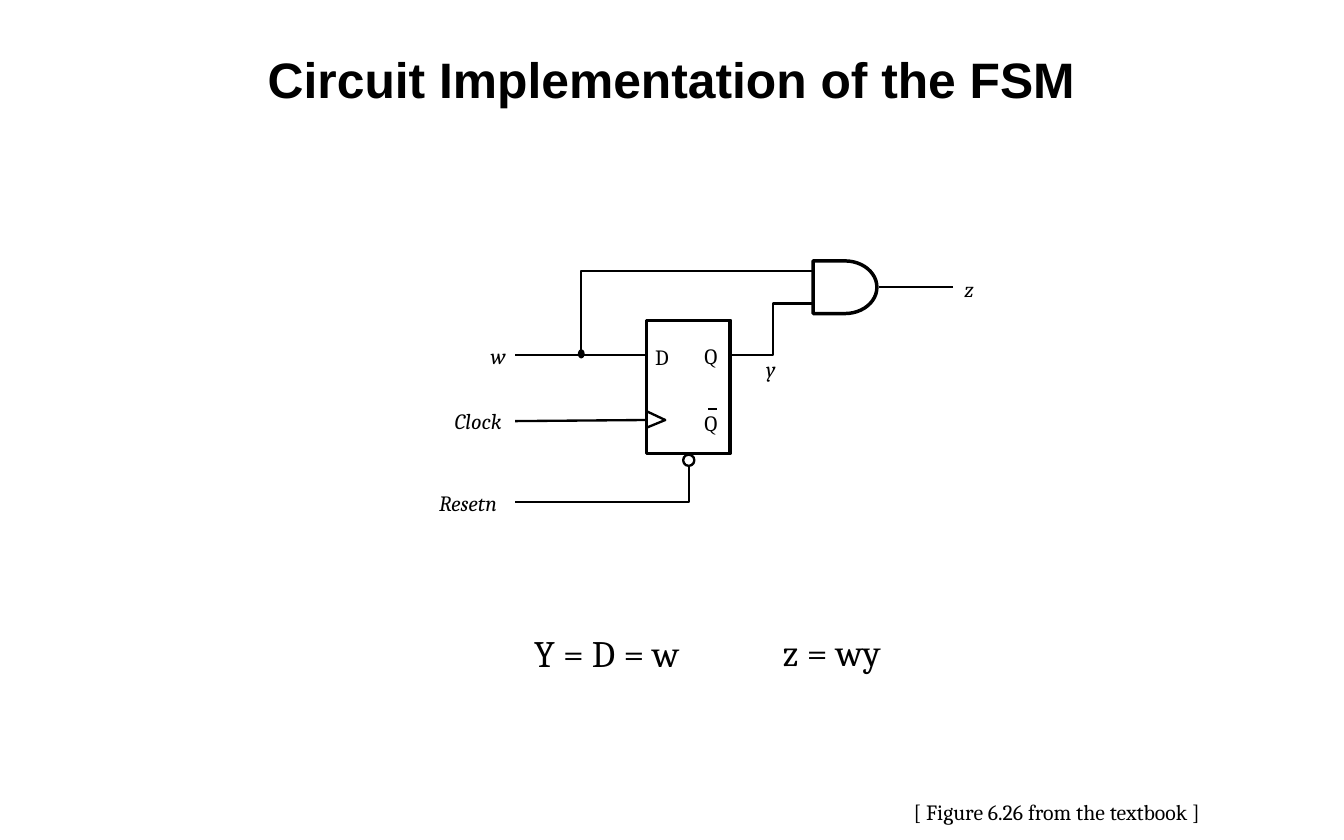
import dataclasses
import typing

import lxml.etree
import pptx
import pptx.dml.color
import pptx.enum.shapes
import pptx.enum.text
import pptx.oxml.ns
import pptx.util

WIDE, HIGH = 12, 7.5
COLS, ROWS = 120, 75
BLACK, WHITE = "000000", "FFFFFF"
THIN, THICK = 1.5, 2.25
KIND = pptx.enum.shapes.MSO_SHAPE
FIT = pptx.enum.text.MSO_AUTO_SIZE
Point = tuple[float, float]


@dataclasses.dataclass
class Label:
    text: str
    col: float
    row: float
    wide: float
    high: float = 2.4
    size: int = 14
    slant: bool = False
    inset: bool = False


@dataclasses.dataclass
class Part:
    kind: pptx.enum.shapes.MSO_SHAPE
    col: float
    row: float
    wide: float
    high: float
    fill: str = WHITE
    line: float = THIN


WIRES: list[list[Point]] = [
    [(46, 44.8), (61.5, 44.8), (61.5, 40.5)],
    [(72.6, 27.1), (69, 27.1), (69, 31.7), (65.2, 31.7)],
    [(72.5, 24.2), (51.9, 24.2), (51.9, 31.7)],
    [(57.7, 38.2), (59.4, 37.5), (57.7, 36.7)],
]

LINES: list[tuple[Point, Point]] = [
    ((85.1, 25.6), (78.5, 25.6)),
    ((64, 36.5), (63.2, 36.5)),
    ((57.7, 37.5), (46, 37.6)),
    ((57.7, 31.7), (46, 31.7)),
]

BLOCK = Part(KIND.RECTANGLE, 57.7, 28.6, 7.5, 11.9, line=THICK)
PARTS = [
    Part(KIND.OVAL, 51.7, 31.3, 0.4, 0.6, fill=BLACK),
    Part(KIND.OVAL, 61, 40.6, 1, 1),
    Part(KIND.FLOWCHART_DELAY, 72.6, 23.3, 5.7, 4.7, line=THICK),
]

LABELS = [
    Label("w", 43.8, 30.6, 1.9, slant=True),
    Label("Clock", 40.6, 36.4, 5.2, slant=True),
    Label("Resetn", 39.2, 43.7, 5.4, slant=True),
    Label("z", 86.1, 24.6, 1.4, slant=True),
    Label("y", 68.4, 31.8, 1.5, slant=True),
    Label("D", 58.5, 30.7, 1.9),
    Label("Q", 62.9, 30.6, 1.9),
    Label("Q", 62.9, 36.6, 1.9),
    Label("Y = D = w", 46.7, 55.8, 16.5, 5.1, size=24, inset=True),
    Label("z = wy", 68.9, 55.7, 11.2, 5.1, size=24, inset=True),
    Label("[ Figure 6.26 from the textbook ]", 80.6, 70.8, 27.9, 3.4, inset=True),
]


def across(cols: float) -> int:
    return pptx.util.Inches(WIDE * cols / COLS)


def down(rows: float) -> int:
    return pptx.util.Inches(HIGH * rows / ROWS)


def paint(form: typing.Any, tint: str) -> None:
    form.solid()
    form.fore_color.rgb = pptx.dml.color.RGBColor.from_string(tint)


def ink(shape: typing.Any, width: float) -> None:
    paint(shape.line.fill, BLACK)
    shape.line.width = pptx.util.Pt(width)


def style(frame: typing.Any, face: str, size: int, bold: bool, slant: bool) -> None:
    for para in frame.paragraphs:
        for run in para.runs:
            run.font.name = face
            run.font.size = pptx.util.Pt(size)
            run.font.bold = bold
            run.font.italic = slant
            paint(run.font.fill, BLACK)


def draw_title(slide: typing.Any, text: str) -> None:
    title = slide.shapes.title
    title.left, title.top = across(10), down(3.3)
    title.width, title.height = across(100), down(7.5)
    frame = title.text_frame
    frame.text = text
    frame.auto_size = FIT.NONE
    frame.vertical_anchor = pptx.enum.text.MSO_ANCHOR.MIDDLE
    frame.paragraphs[0].alignment = pptx.enum.text.PP_ALIGN.CENTER
    style(frame, "Arial", 32, True, False)


def draw_wire(slide: typing.Any, points: list[Point]) -> None:
    first, *rest = [(across(col), down(row)) for col, row in points]
    build = slide.shapes.build_freeform(*first)
    build.add_line_segments(rest, close=False)
    wire = build.convert_to_shape()
    wire.shadow.inherit = False
    wire.fill.background()
    ink(wire, THIN)


def draw_line(slide: typing.Any, start: Point, end: Point) -> None:
    line = slide.shapes.add_connector(
        pptx.enum.shapes.MSO_CONNECTOR.STRAIGHT,
        across(start[0]), down(start[1]), across(end[0]), down(end[1]))
    ink(line, THIN)
    props = line._element.spPr
    lxml.etree.SubElement(props, pptx.oxml.ns.qn("a:effectLst"))


def draw_part(slide: typing.Any, part: Part) -> None:
    shape = slide.shapes.add_shape(
        part.kind, across(part.col), down(part.row),
        across(part.wide), down(part.high))
    shape.shadow.inherit = False
    paint(shape.fill, part.fill)
    ink(shape, part.line)


def draw_label(slide: typing.Any, label: Label) -> None:
    box = slide.shapes.add_textbox(
        across(label.col), down(label.row), across(label.wide), down(label.high))
    frame = box.text_frame
    frame.text = label.text
    frame.word_wrap = False
    frame.auto_size = FIT.SHAPE_TO_FIT_TEXT
    if not label.inset:
        frame.margin_left = frame.margin_right = 0
        frame.margin_top = frame.margin_bottom = 0
    style(frame, "Cambria", label.size, False, label.slant)


def main() -> None:
    deck = pptx.Presentation()
    deck.slide_width, deck.slide_height = across(COLS), down(ROWS)
    slide = deck.slides.add_slide(deck.slide_layouts.get_by_name("Title Only"))
    draw_title(slide, "Circuit Implementation of the FSM")
    draw_part(slide, BLOCK)
    for points in WIRES:
        draw_wire(slide, points)
    for start, end in LINES:
        draw_line(slide, start, end)
    for part in PARTS:
        draw_part(slide, part)
    for label in LABELS:
        draw_label(slide, label)
    deck.save("out.pptx")


if __name__ == "__main__":
    main()
